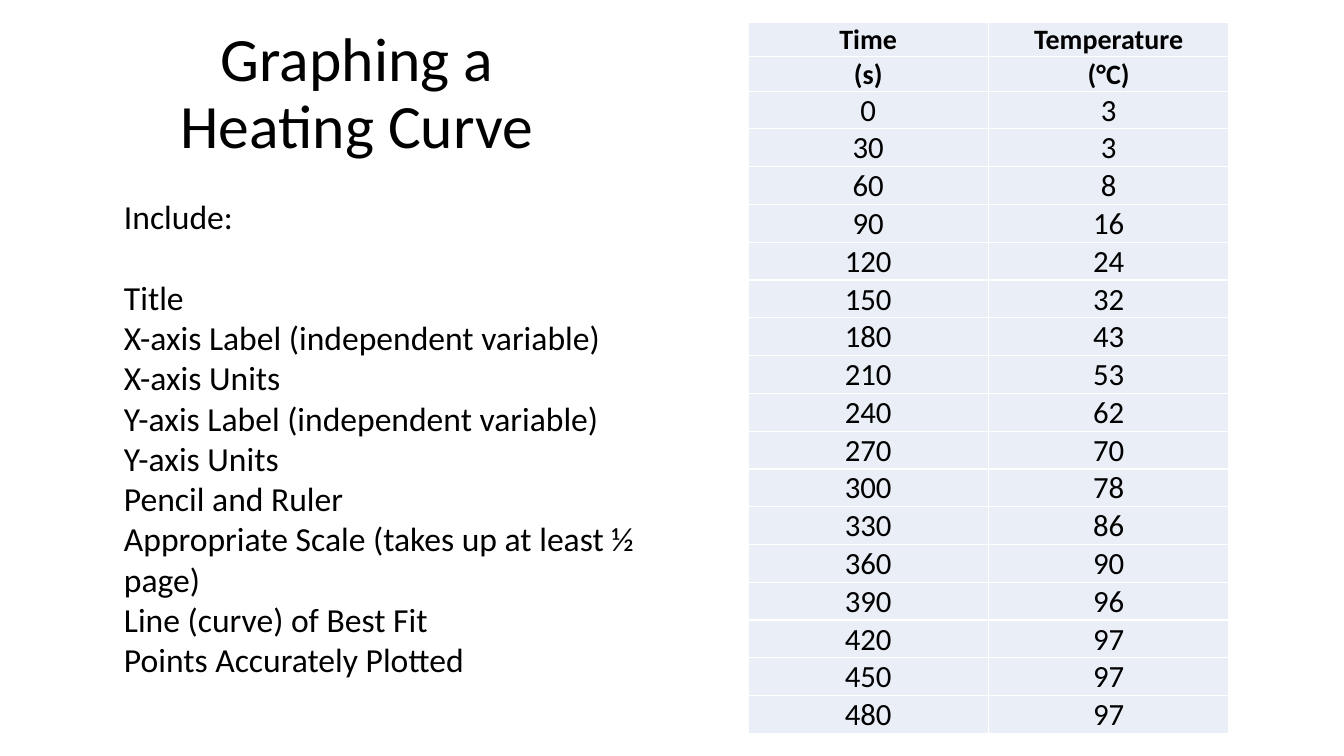
from lxml.etree import SubElement
from pptx import Presentation
from pptx.dml.color import RGBColor
from pptx.enum.text import MSO_ANCHOR, MSO_AUTO_SIZE, PP_ALIGN
from pptx.oxml import parse_xml
from pptx.oxml.ns import nsdecls, qn
from pptx.util import Cm, Pt

COLORS = {"text": "000000", "cell": "EAEFF7", "border": "FFFFFF"}
TEMPERATURES = [3, 3, 8, 16, 24, 32, 43, 53, 62, 70, 78, 86, 90, 96, 97, 97, 97]
CHECKLIST = [
    "Include:",
    "Title",
    "X-axis Label (independent variable)",
    "X-axis Units",
    "Y-axis Label (independent variable)",
    "Y-axis Units",
    "Pencil and Ruler",
    "Appropriate Scale (takes up at least ½ page)",
    "Line (curve) of Best Fit",
    "Points Accurately Plotted",
]


def write(para, text, size, bold=False, align=PP_ALIGN.CENTER, spacing=1.0):
    para.alignment = align
    para.line_spacing = spacing
    para.space_before = para.space_after = Pt(0)
    span = para.add_run()
    span.text = text
    span.font.name = "Calibri"
    span.font.size = Pt(size)
    span.font.bold = bold
    span.font.color.rgb = RGBColor.from_string(COLORS["text"])


def add_borders(cell):
    properties = cell._tc.get_or_add_tcPr()
    for position, side in enumerate(("lnL", "lnR", "lnT", "lnB")):
        line = parse_xml(
            f'<a:{side} {nsdecls("a")} w="12700"><a:solidFill>'
            f'<a:srgbClr val="{COLORS["border"]}"/></a:solidFill></a:{side}>'
        )
        properties.insert(position, line)


deck = Presentation()
deck.slide_width, deck.slide_height = Cm(33.87), Cm(19.05)
page = deck.slides.add_slide(deck.slide_layouts[1])

# Title
title = page.shapes.title
title.left, title.top, title.width, title.height = Cm(4.29), Cm(0.56), Cm(9.42), Cm(3.68)
title.text_frame.auto_size = MSO_AUTO_SIZE.NONE
title.text_frame.vertical_anchor = MSO_ANCHOR.MIDDLE
write(title.text_frame.paragraphs[0], "Graphing a Heating Curve", 44, spacing=0.9)

# Temperature readings, one every 30 seconds
readings = [(30 * step, value) for step, value in enumerate(TEMPERATURES)]
rows = [("Time", "Temperature"), ("(s)", "(°C)"), *readings]
row_height = Cm(0.81)
frame = page.shapes.add_table(
    len(rows), 2, Cm(18.85), Cm(0.56), Cm(12.12), row_height * len(rows)
)
table = frame.table
table.first_row = table.horz_banding = False
for row_index, values in enumerate(rows):
    table.rows[row_index].height = row_height
    heading = row_index < 2
    for column_index, value in enumerate(values):
        cell = table.cell(row_index, column_index)
        cell.vertical_anchor = MSO_ANCHOR.BOTTOM
        cell.margin_left = cell.margin_right = cell.margin_top = Cm(0.02)
        cell.margin_bottom = Cm(0)
        cell.fill.solid()
        cell.fill.fore_color.rgb = RGBColor.from_string(COLORS["cell"])
        add_borders(cell)
        write(cell.text_frame.paragraphs[0], str(value), 20 if heading else 22, bold=heading)

# Checklist
body = page.placeholders[1]
body.left, body.top, body.width, body.height = Cm(2.87), Cm(4.8), Cm(13.41), Cm(12.57)
body.text_frame.auto_size = MSO_AUTO_SIZE.SHAPE_TO_FIT_TEXT
for index, item in enumerate(CHECKLIST):
    para = body.text_frame.paragraphs[0] if index == 0 else body.text_frame.add_paragraph()
    write(para, item, 24, align=PP_ALIGN.LEFT)
    properties = para._p.get_or_add_pPr()
    properties.set("marL", "0")
    properties.set("indent", "0")
    SubElement(properties, qn("a:buNone"))
body.text_frame.paragraphs[0].space_after = Pt(29)

deck.save("out.pptx")
